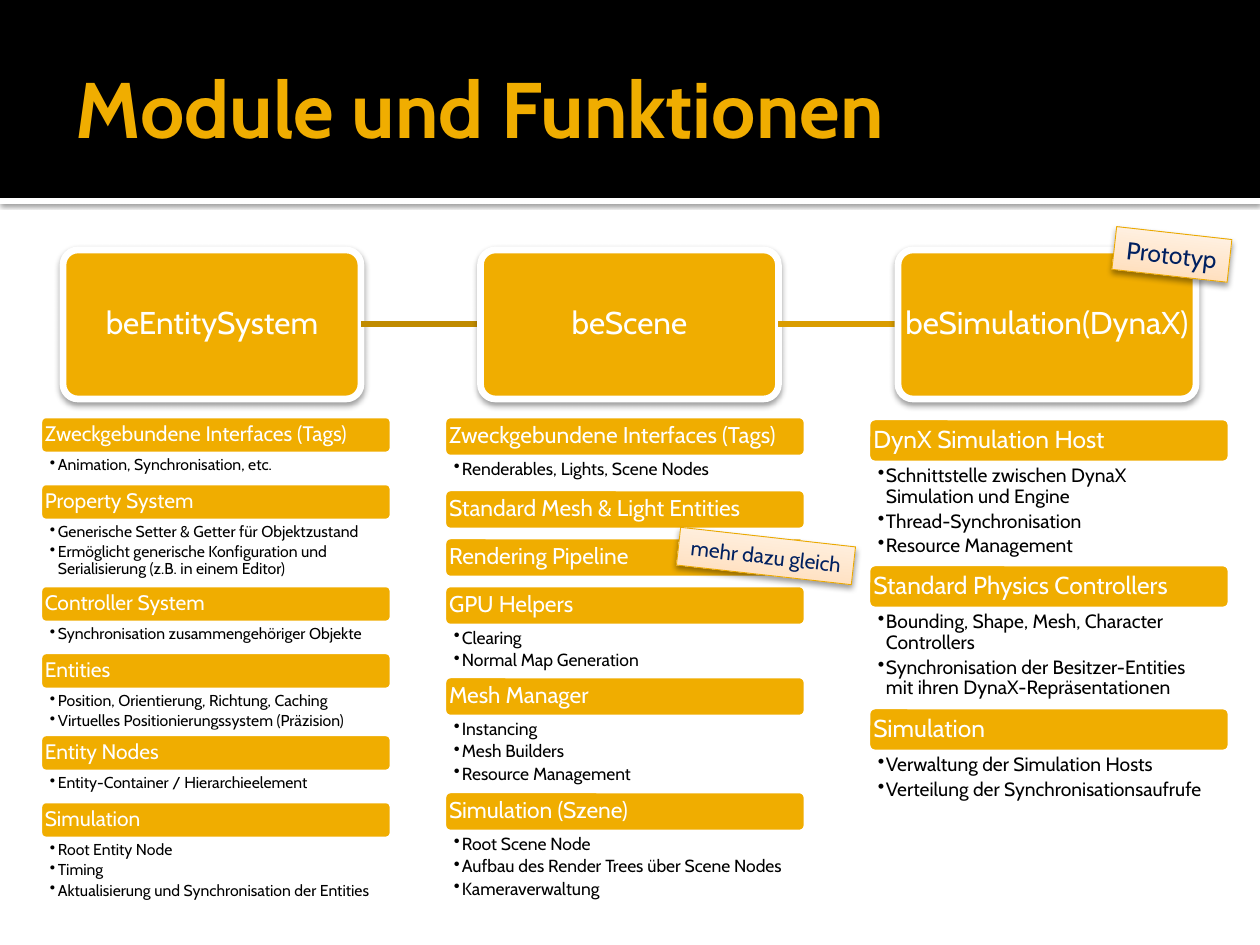
from lxml.etree import SubElement
from pptx import Presentation
from pptx.dml.color import RGBColor
from pptx.enum.shapes import MSO_CONNECTOR, MSO_SHAPE
from pptx.enum.text import MSO_ANCHOR, PP_ALIGN
from pptx.oxml.ns import qn
from pptx.util import Emu, Pt

PX = 914400 / 126  # EMU per px
COLORS = {
    "gold": "F0AD00", "white": "FFFFFF", "black": "000000", "navy": "002060",
    "link_dark": "C08B00", "link_light": "DA9D00",
    "note_dark": "FFDBB5", "note_light": "FFF5EB", "note_line": "EBA900",
}
# Shadows: opacity in percent, blur and distance in points
SOFT = (38, 3.5, 2)
BAND = (60, 2.5, 0.8)

MODULES = ["beEntitySystem", "beScene", "beSimulation(DynaX)"]

# Sections: heading, height below the heading, bullets
COLUMNS = [
    {"left": 39, "top": 415, "width": 354, "bar": 40, "sizes": (12, 9), "sections": [
        ("Zweckgebundene Interfaces (Tags)", 27, ["Animation, Synchronisation, etc."]),
        ("Property System", 62, [
            "Generische Setter & Getter für Objektzustand",
            "Ermöglicht generische Konfiguration und Serialisierung (z.B. in einem Editor)"]),
        ("Controller System", 27, ["Synchronisation zusammengehöriger Objekte"]),
        ("Entities", 42, [
            "Position, Orientierung, Richtung, Caching",
            "Virtuelles Positionierungssystem (Präzision)"]),
        ("Entity Nodes", 27, ["Entity-Container / Hierarchieelement"]),
        ("Simulation", 66, [
            "Root Entity Node", "Timing",
            "Aktualisierung und Synchronisation der Entities"]),
    ]},
    {"left": 443, "top": 415, "width": 364, "bar": 43, "sizes": (13, 10), "sections": [
        ("Zweckgebundene Interfaces (Tags)", 30, ["Renderables, Lights, Scene Nodes"]),
        ("Standard Mesh & Light Entities", 5, []),
        ("Rendering Pipeline", 5, []),
        ("GPU Helpers", 48, ["Clearing", "Normal Map Generation"]),
        ("Mesh Manager", 72, ["Instancing", "Mesh Builders", "Resource Management"]),
        ("Simulation (Szene)", 72, [
            "Root Scene Node", "Aufbau des Render Trees über Scene Nodes",
            "Kameraverwaltung"]),
    ]},
    {"left": 867, "top": 417, "width": 364, "bar": 47, "sizes": (14, 11), "sections": [
        ("DynX Simulation Host", 99, [
            "Schnittstelle zwischen DynaX Simulation und Engine",
            "Thread-Synchronisation", "Resource Management"]),
        ("Standard Physics Controllers", 96, [
            "Bounding, Shape, Mesh, Character Controllers",
            "Synchronisation der Besitzer-Entities mit ihren DynaX-Repräsentationen"]),
        ("Simulation", 52, [
            "Verwaltung der Simulation Hosts",
            "Verteilung der Synchronisationsaufrufe"]),
    ]},
]


def px(*values):
    return [Emu(round(v * PX)) for v in values]


def rgb(name):
    return RGBColor.from_string(COLORS[name])


def apply(obj, values):
    for name, value in values.items():
        setattr(obj, name, value)


def set_frame(tf, insets, anchor=MSO_ANCHOR.MIDDLE, wrap=True):
    left, top, right, bottom = px(*insets)
    apply(tf, {"margin_left": left, "margin_top": top, "margin_right": right,
               "margin_bottom": bottom, "vertical_anchor": anchor, "word_wrap": wrap})


def write(p, text, size, color, bold=False, **paragraph):
    apply(p, paragraph)
    r = p.add_run()
    r.text = text
    apply(r.font, {"name": "Cabin", "size": Pt(size), "bold": bold})
    r.font.color.rgb = rgb(color)


def add_shadow(sp, opacity, blur, distance):
    sp.shadow.inherit = False
    effects = sp._element.spPr.find(qn("a:effectLst"))
    shadow = SubElement(effects, qn("a:outerShdw"), blurRad=str(Pt(blur)),
                        dist=str(Pt(distance)), dir="5400000", rotWithShape="0")
    color = SubElement(shadow, qn("a:srgbClr"), val=COLORS["black"])
    SubElement(color, qn("a:alpha"), val=str(opacity * 1000))


def add_box(slide, kind, box, fill, line=None, width=0, shadow=None):
    sp = slide.shapes.add_shape(kind, *px(*box))
    sp.shadow.inherit = False
    if fill:
        sp.fill.solid()
        sp.fill.fore_color.rgb = rgb(fill)
    if line:
        sp.line.color.rgb = rgb(line)
        sp.line.width = Pt(width)
    else:
        sp.line.fill.background()
    if shadow:
        add_shadow(sp, *shadow)
    return sp


def add_link(slide, x1, x2, y, color):
    line = slide.shapes.add_connector(MSO_CONNECTOR.STRAIGHT, *px(x1, y, x2, y))
    line.line.color.rgb = rgb(color)
    line.line.width = Pt(3.78)
    SubElement(line._element.spPr, qn("a:effectLst"))


def add_module(slide, left, name):
    sp = add_box(slide, MSO_SHAPE.ROUNDED_RECTANGLE, (left, 250, 298, 149),
                 "gold", "white", 3.82, SOFT)
    sp.adjustments[0] = 0.1
    set_frame(sp.text_frame, (1, 1, 1, 1))
    write(sp.text_frame.paragraphs[0], name, 18, "white",
          alignment=PP_ALIGN.CENTER, line_spacing=0.9)


def add_bar(slide, box, text, size):
    sp = add_box(slide, MSO_SHAPE.ROUNDED_RECTANGLE, box, "gold", "white", 3.78)
    set_frame(sp.text_frame, (4, 4, 4, 4))
    write(sp.text_frame.paragraphs[0], text, size, "white",
          alignment=PP_ALIGN.LEFT, line_spacing=0.9)


def add_bullets(slide, box, items, size):
    tf = slide.shapes.add_textbox(*px(*box)).text_frame
    set_frame(tf, (11, 2, 14, 2), MSO_ANCHOR.TOP)
    indent = px(8)[0]
    for i, item in enumerate(items):
        p = tf.add_paragraph() if i else tf.paragraphs[0]
        write(p, item, size, "black", level=1, line_spacing=0.9,
              space_after=Pt(size * 0.2))
        pPr = p._p.get_or_add_pPr()
        pPr.set("marL", str(indent))
        pPr.set("indent", str(-indent))
        SubElement(pPr, qn("a:buChar"), char="•")


def add_column(slide, left, top, width, bar, sizes, sections):
    for heading, height, items in sections:
        add_bar(slide, (left, top, width, bar), heading, sizes[0])
        if items:
            add_bullets(slide, (left, top + bar, width, height), items, sizes[1])
        top += bar + height


def add_note(slide, box, text, size):
    sp = add_box(slide, MSO_SHAPE.RECTANGLE, box, None, "note_line", 0.5, SOFT)
    sp.fill.gradient()
    sp.fill.gradient_angle = 90
    for stop, name in zip(sp.fill.gradient_stops, ("note_dark", "note_light")):
        stop.color.rgb = rgb(name)
    sp.rotation = 6.4
    set_frame(sp.text_frame, (12, 6, 12, 6), wrap=False)
    write(sp.text_frame.paragraphs[0], text, size, "navy", alignment=PP_ALIGN.CENTER)


def add_title(slide, text):
    title = slide.shapes.title
    left, top, width, height = px(63, 21, 1134, 173)
    apply(title, {"left": left, "top": top, "width": width, "height": height})
    set_frame(title.text_frame, (13, 6, 6, 6))
    write(title.text_frame.paragraphs[0], text, 45, "gold", bold=True,
          alignment=PP_ALIGN.LEFT)
    slide.shapes._spTree.append(title._element)  # in front of the band


def main():
    prs = Presentation()
    prs.slide_width, prs.slide_height = px(1260, 945)
    slide = prs.slides.add_slide(prs.slide_layouts[5])

    # Header band and title
    add_box(slide, MSO_SHAPE.RECTANGLE, (0, 198, 1260, 6), "white", shadow=BAND)
    add_box(slide, MSO_SHAPE.RECTANGLE, (0, 0, 1260, 198), "black")
    add_title(slide, "Module und Funktionen")

    # Linked modules
    links = ["link_dark", "link_light"]
    for i, name in enumerate(MODULES):
        left = 63 + 417.5 * i
        add_module(slide, left, name)
        if i < len(links):
            add_link(slide, left + 298, left + 417.5, 324, links[i])

    # Functions of each module
    for column in COLUMNS:
        add_column(slide, **column)

    # Tilted notes
    add_note(slide, (1114, 233, 116, 43), "Prototyp", 14)
    add_note(slide, (678, 537, 176, 38), "mehr dazu gleich", 12)

    prs.save("out.pptx")


if __name__ == "__main__":
    main()
